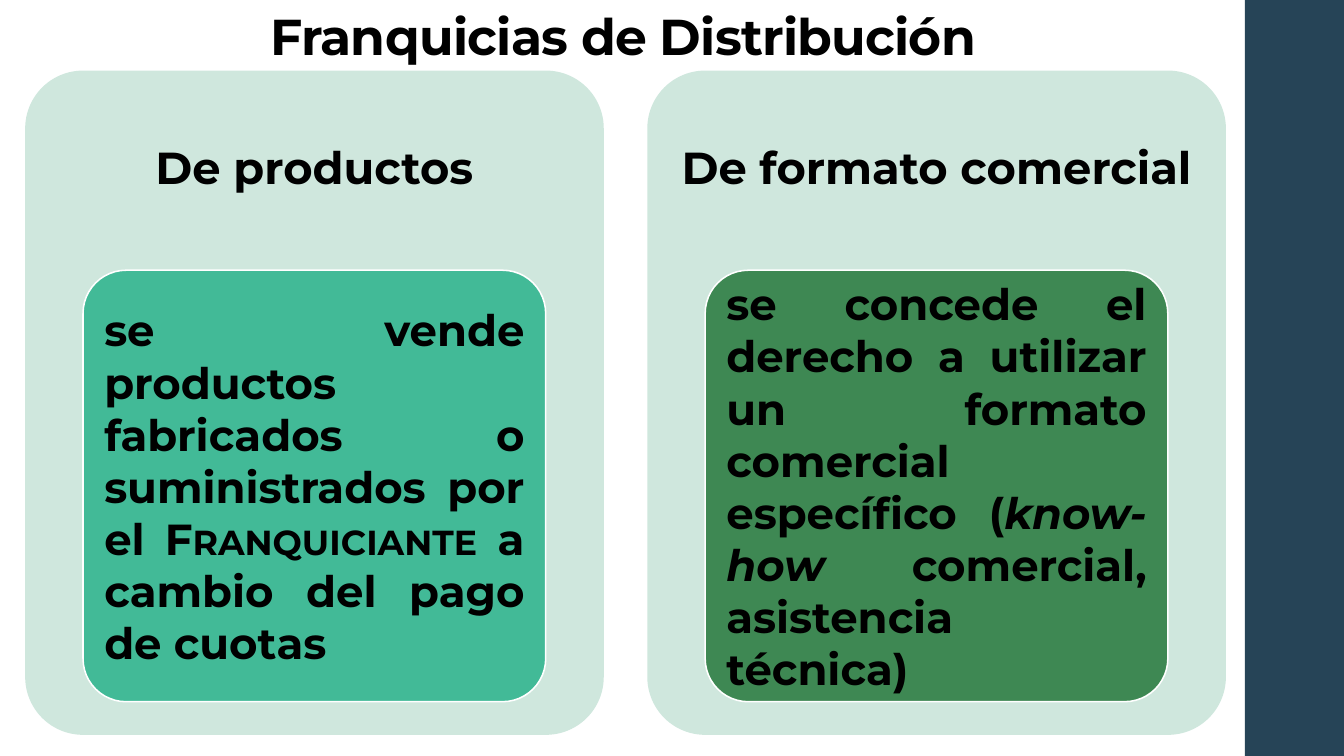
from dataclasses import dataclass

from pptx import Presentation
from pptx.dml.color import RGBColor
from pptx.enum.shapes import MSO_SHAPE as Shape
from pptx.enum.text import MSO_ANCHOR as Anchor, MSO_AUTO_SIZE as AutoSize, PP_ALIGN as Align
from pptx.util import Pt


@dataclass(frozen=True)
class Theme:
    font: str = "Montserrat"
    title_size: float = 36
    heading_size: float = 32
    body_size: float = 31
    ink: str = "000000"
    band: str = "264457"
    panel: str = "CFE7DD"
    outline: str = "FFFFFF"
    products: str = "42BA97"
    business_format: str = "3E8853"


THEME = Theme()
PAGE_WIDTH, PAGE_HEIGHT = 960, 540
PANEL_TOP, PANEL_WIDTH, PANEL_HEIGHT = 50.4, 413.3, 474.5
HEADING_HEIGHT = 142.6
CARD_INSET, CARD_WIDTH, CARD_HEIGHT = 41.3, 330.5, 308.2
CARD_PADDING = 9

COLUMNS = [
    (18, "De productos", THEME.products, [
        ("se vende productos fabricados o suministrados por el ", {}),
        ("Franquiciante", {"cap": "small"}),
        (" a cambio del pago de cuotas", {}),
    ]),
    (462.4, "De formato comercial", THEME.business_format, [
        ("se concede el derecho a utilizar un formato comercial específico (", {}),
        ("know-how", {"i": "1"}),
        (" comercial, asistencia técnica)", {}),
    ]),
]


def add_block(page, kind, left, top, width, height, fill, outline=None):
    block = page.shapes.add_shape(kind, Pt(left), Pt(top), Pt(width), Pt(height))
    block.shadow.inherit = False
    block.fill.solid()
    block.fill.fore_color.rgb = RGBColor.from_string(fill)
    if kind == Shape.ROUNDED_RECTANGLE:
        block.adjustments[0] = 0.1
    if outline:
        block.line.color.rgb = RGBColor.from_string(outline)
        block.line.width = Pt(1.1)
    else:
        block.line.fill.background()


def write_text(box, spans, size, align, anchor, spacing=None):
    frame = box.text_frame
    frame.word_wrap = True
    frame.auto_size = AutoSize.NONE
    frame.vertical_anchor = anchor
    para = frame.paragraphs[0]
    para.alignment = align
    if spacing:
        para.line_spacing = spacing
    para.font.name = THEME.font
    para.font.size = Pt(size)
    para.font.bold = True
    para.font.color.rgb = RGBColor.from_string(THEME.ink)
    for text, attributes in spans:
        span = para.add_run()
        span.text = text
        for name, value in attributes.items():
            span._r.get_or_add_rPr().set(name, value)


def add_text(page, left, top, width, height, margins, *text_format):
    box = page.shapes.add_textbox(Pt(left), Pt(top), Pt(width), Pt(height))
    frame = box.text_frame
    frame.margin_left = frame.margin_right = Pt(margins[0])
    frame.margin_top = frame.margin_bottom = Pt(margins[1])
    write_text(box, *text_format)


def set_title(page, text):
    title = page.shapes.title
    title.left, title.top = Pt(0), Pt(0)
    title.width, title.height = Pt(890.6), Pt(50.4)
    write_text(title, [(text, {"spc": "-50"})], THEME.title_size, Align.CENTER, Anchor.BOTTOM)


def add_column(page, left, heading, card_fill, body):
    add_block(page, Shape.ROUNDED_RECTANGLE, left, PANEL_TOP, PANEL_WIDTH, PANEL_HEIGHT, THEME.panel)
    add_text(page, left, PANEL_TOP, PANEL_WIDTH, HEADING_HEIGHT, (9.4, 9.4),
             [(heading, {})], THEME.heading_size, Align.CENTER, Anchor.MIDDLE, 0.9)
    card_left, card_top = left + CARD_INSET, PANEL_TOP + HEADING_HEIGHT
    add_block(page, Shape.ROUNDED_RECTANGLE, card_left, card_top, CARD_WIDTH, CARD_HEIGHT,
              card_fill, THEME.outline)
    add_text(page, card_left + CARD_PADDING, card_top + CARD_PADDING,
             CARD_WIDTH - 2 * CARD_PADDING, CARD_HEIGHT - 2 * CARD_PADDING, (6.2, 4.6),
             body, THEME.body_size, Align.JUSTIFY, Anchor.MIDDLE)


def main():
    deck = Presentation()
    deck.slide_width, deck.slide_height = Pt(PAGE_WIDTH), Pt(PAGE_HEIGHT)
    page = deck.slides.add_slide(deck.slide_layouts[5])
    add_block(page, Shape.RECTANGLE, 889.2, 0, 72, PAGE_HEIGHT, THEME.band)
    set_title(page, "Franquicias de Distribución")
    for column in COLUMNS:
        add_column(page, *column)
    deck.save("out.pptx")


if __name__ == "__main__":
    main()
